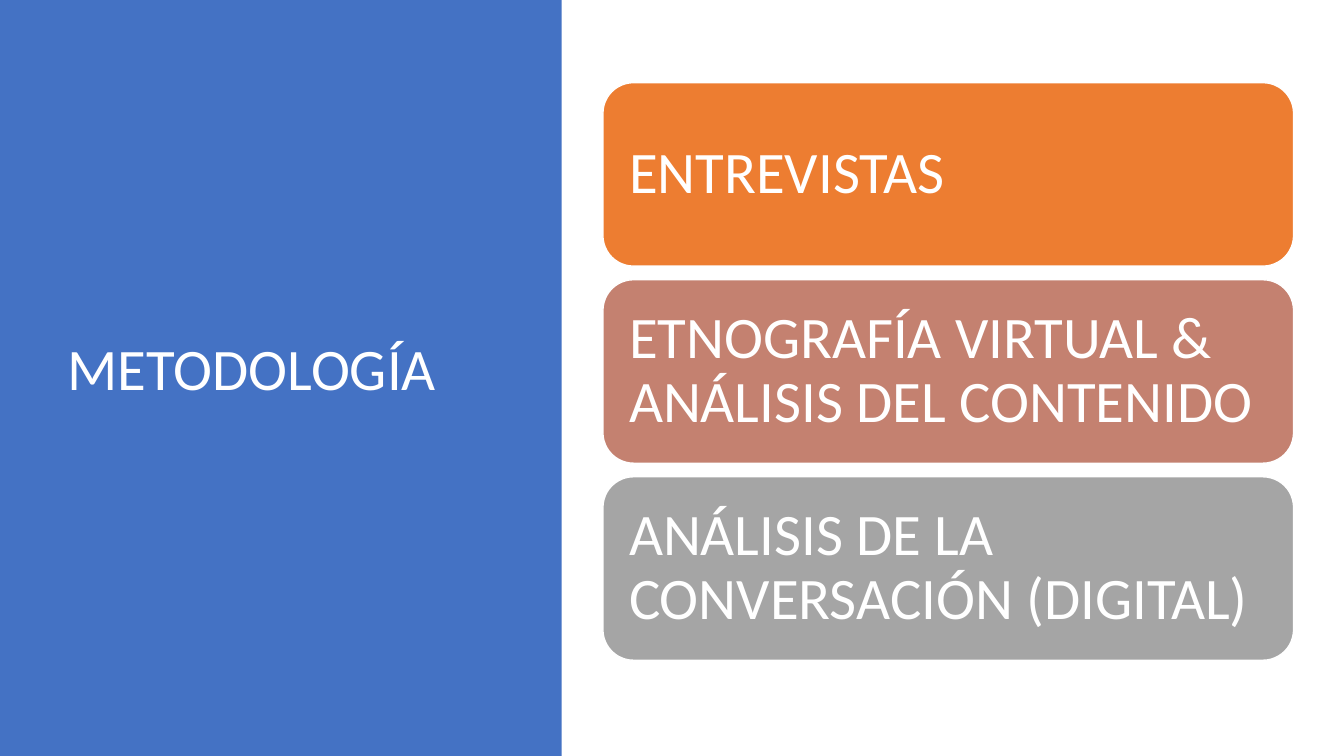
from pptx import Presentation
from pptx.dml.color import RGBColor
from pptx.enum.shapes import MSO_SHAPE
from pptx.enum.text import MSO_ANCHOR, MSO_AUTO_SIZE, PP_ALIGN
from pptx.util import Inches, Pt

RECTANGLE = MSO_SHAPE.RECTANGLE
ROUNDED = MSO_SHAPE.ROUNDED_RECTANGLE
MIDDLE = MSO_ANCHOR.MIDDLE
NO_AUTOFIT = MSO_AUTO_SIZE.NONE
LEFT = PP_ALIGN.LEFT

WHITE = "FFFFFF"
METHODS = [
    ("ENTREVISTAS", "ED7D31"),
    ("ETNOGRAFÍA VIRTUAL & ANÁLISIS DEL CONTENIDO", "C48170"),
    ("ANÁLISIS DE LA CONVERSACIÓN (DIGITAL)", "A5A5A5"),
]


def color(hex_value):
    """Return the colour for a hex string."""
    return RGBColor.from_string(hex_value)


def write(shape, text, size=42, font="Calibri", fill=WHITE, inset=0.1):
    """Write left-aligned, vertically centred text into a shape."""
    frame = shape.text_frame
    frame.word_wrap = True
    frame.auto_size = NO_AUTOFIT
    frame.vertical_anchor = MIDDLE
    frame.margin_left = frame.margin_right = Inches(inset)
    frame.margin_top = frame.margin_bottom = Inches(inset)
    paragraph = frame.paragraphs[0]
    paragraph.alignment = LEFT
    paragraph.line_spacing = 0.9
    run = paragraph.add_run()
    run.text = text
    run.font.size = Pt(size)
    run.font.name = font
    run.font.color.rgb = color(fill)


def add_block(slide, kind, left, top, width, height, fill, line=None):
    """Add a filled shape, outlined when a line colour is given."""
    block = slide.shapes.add_shape(
        kind, Inches(left), Inches(top), Inches(width), Inches(height))
    block.shadow.inherit = False
    block.fill.solid()
    block.fill.fore_color.rgb = color(fill)
    if line:
        block.line.color.rgb = color(line)
        block.line.width = Pt(1)
    else:
        block.line.fill.background()
    return block


def add_title_panel(slide, left, top, width, height):
    """Place the coloured side panel with the slide title on it."""
    panel = add_block(slide, RECTANGLE, left, top, width, height, "4472C4")
    title = slide.shapes.title
    title.element.addprevious(panel.element)
    title.left, title.top = Inches(left + 0.57), Inches(top + 0.68)
    title.width, title.height = Inches(width - 1.41), Inches(height - 1.48)
    write(title, "METODOLOGÍA")


def add_method_list(slide, left, top, width, height, card_height=1.82):
    """Spread the method cards evenly down the given box."""
    step = (height - card_height) / (len(METHODS) - 1)
    for index, (method, fill) in enumerate(METHODS):
        card = add_block(slide, ROUNDED, left, top + index * step,
                         width, card_height, fill, line=WHITE)
        write(card, method, inset=0.17)


def main():
    """Build and save the methodology slide."""
    deck = Presentation()
    deck.slide_width, deck.slide_height = Inches(13.33), Inches(7.5)
    slide = deck.slides.add_slide(deck.slide_layouts.get_by_name("Title Only"))
    add_title_panel(slide, 0, 0, 5.57, 7.5)
    add_method_list(slide, 5.98, 0.82, 6.85, 5.73)
    deck.save("out.pptx")


if __name__ == "__main__":
    main()
